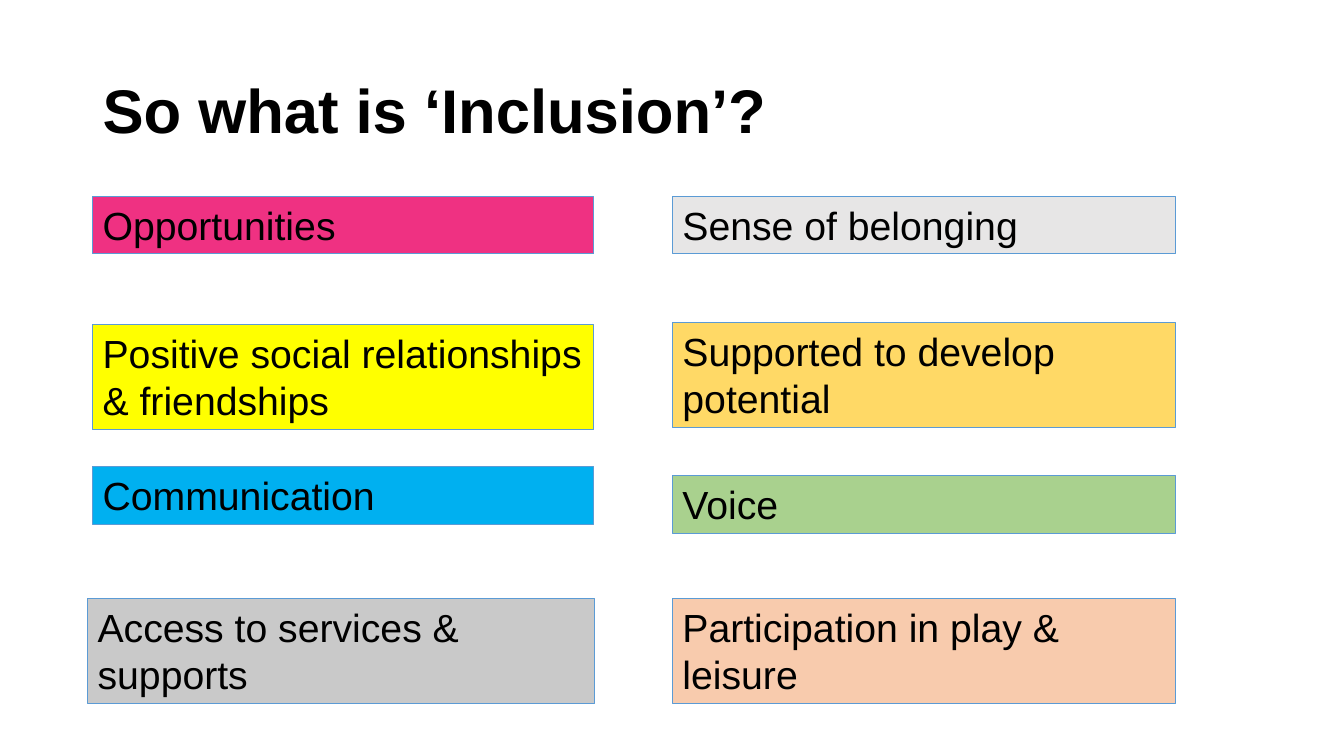
from pptx import Presentation
from pptx.dml.color import RGBColor
from pptx.enum.shapes import MSO_SHAPE
from pptx.enum.text import MSO_ANCHOR, MSO_AUTO_SIZE, PP_ALIGN
from pptx.util import Inches, Pt

BLACK = RGBColor(0x00, 0x00, 0x00)
BLUE = RGBColor(0x5B, 0x9B, 0xD5)
PINK = RGBColor(0xEF, 0x31, 0x82)
YELLOW = RGBColor(0xFF, 0xFF, 0x00)
CYAN = RGBColor(0x00, 0xB0, 0xF0)
GREY = RGBColor(0xC9, 0xC9, 0xC9)
PALE = RGBColor(0xE7, 0xE6, 0xE6)
GOLD = RGBColor(0xFF, 0xD9, 0x66)
GREEN = RGBColor(0xA9, 0xD1, 0x8E)
PEACH = RGBColor(0xF8, 0xCB, 0xAD)

FONT = "Arial"
LEFT, RIGHT = (0.92, 4.97), (6.67, 4.99)
WIDE = (0.87, 5.03)
ONE, TWO = 0.57, 1.04

CARDS = [
    ("Opportunities", PINK, LEFT, 1.95, ONE),
    ("Positive social relationships & friendships", YELLOW, LEFT, 3.22, TWO),
    ("Communication", CYAN, LEFT, 4.63, ONE),
    ("Access to services & supports", GREY, WIDE, 5.94, TWO),
    ("Sense of belonging", PALE, RIGHT, 1.95, ONE),
    ("Supported to develop potential", GOLD, RIGHT, 3.2, TWO),
    ("Voice", GREEN, RIGHT, 4.72, ONE),
    ("Participation in play & leisure", PEACH, RIGHT, 5.94, TWO),
]


def write(frame, text, size=28, bold=False, anchor=MSO_ANCHOR.TOP,
          fit=MSO_AUTO_SIZE.NONE, space=1.0):
    """Put formatted text in a frame."""
    frame.word_wrap = True
    frame.auto_size = fit
    frame.vertical_anchor = anchor
    para = frame.paragraphs[0]
    para.alignment = PP_ALIGN.LEFT
    para.line_spacing = space
    run = para.add_run()
    run.text = text
    run.font.name = FONT
    run.font.size = Pt(size)
    run.font.bold = bold
    run.font.color.rgb = BLACK


def add_title(slide, text):
    """Add the slide heading."""
    box = slide.shapes.add_textbox(
        Inches(0.92), Inches(0.4), Inches(11.5), Inches(1.45))
    write(box.text_frame, text, size=44, bold=True,
          anchor=MSO_ANCHOR.MIDDLE, space=0.9)


def add_card(slide, text, fill, column, top, height):
    """Add one coloured card to a column."""
    left, width = column
    card = slide.shapes.add_shape(
        MSO_SHAPE.RECTANGLE, Inches(left), Inches(top),
        Inches(width), Inches(height))
    card.shadow.inherit = False
    card.fill.solid()
    card.fill.fore_color.rgb = fill
    card.line.color.rgb = BLUE
    card.line.width = Pt(0.75)
    write(card.text_frame, text, fit=MSO_AUTO_SIZE.SHAPE_TO_FIT_TEXT)


def main():
    """Build and save the slide."""
    deck = Presentation()
    deck.slide_width = Inches(13.33)
    deck.slide_height = Inches(7.5)
    slide = deck.slides.add_slide(deck.slide_layouts[6])
    add_title(slide, "So what is ‘Inclusion’?")
    for card in CARDS:
        add_card(slide, *card)
    deck.save("out.pptx")


if __name__ == "__main__":
    main()
